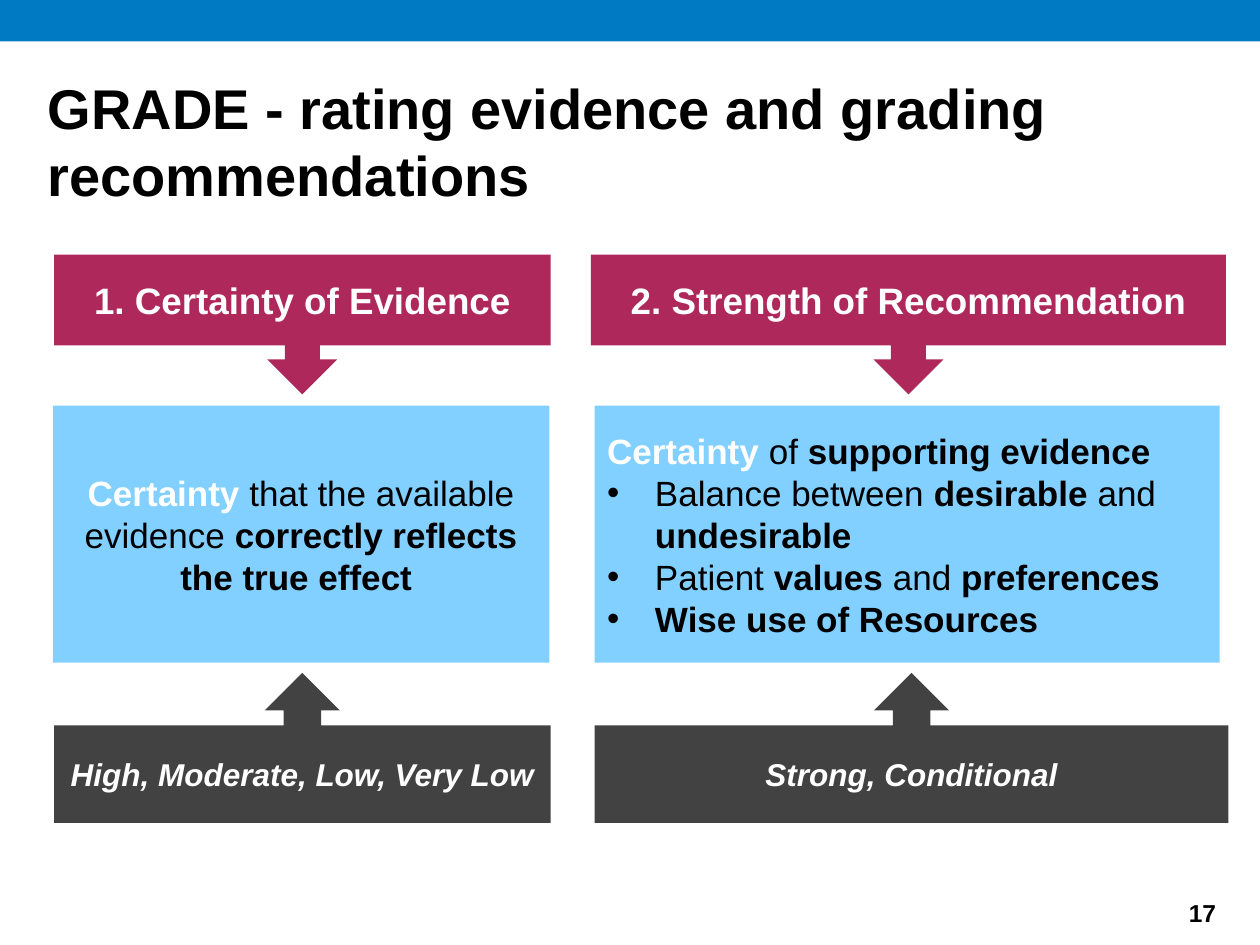
from dataclasses import dataclass, field

import lxml.etree
import pptx
import pptx.dml.color
import pptx.enum.shapes
import pptx.enum.text
import pptx.oxml.ns
import pptx.util

SHAPE = pptx.enum.shapes.MSO_SHAPE
ALIGN = pptx.enum.text.PP_ALIGN
WIDTH, HEIGHT = pptx.util.Inches(10), pptx.util.Inches(7.5)
COLUMNS, ROWS = 100, 75
BLUE, CRIMSON, SKY, BLACK, WHITE = "007BC3", "AE285B", "81D0FF", "000000", "FFFFFF"


@dataclass
class Area:
    """A place on the slide, in grid columns and rows."""
    column: float
    row: float
    columns: float
    rows: float

    def lengths(self) -> tuple[int, int, int, int]:
        across, down = WIDTH / COLUMNS, HEIGHT / ROWS
        return (round(self.column * across), round(self.row * down),
                round(self.columns * across), round(self.rows * down))


@dataclass
class Run:
    text: str
    bold: bool = False
    color: str = BLACK
    italic: bool = False


@dataclass
class Line:
    runs: list[Run]
    bullet: bool = False


@dataclass
class Block:
    area: Area
    fill: str
    lines: list[Line] = field(default_factory=list)
    size: float = 20
    align: ALIGN = ALIGN.CENTER
    kind: SHAPE = SHAPE.RECTANGLE
    opacity: int = 100


def rgb(color: str) -> pptx.dml.color.RGBColor:
    return pptx.dml.color.RGBColor.from_string(color)


def add_bullet(para) -> None:
    properties = para._p.get_or_add_pPr()
    indent = pptx.util.Inches(0.38)
    properties.set("marL", str(indent))
    properties.set("indent", str(-indent))
    for tag, name, value in (("a:buFont", "typeface", "Arial"), ("a:buChar", "char", "•")):
        mark = lxml.etree.SubElement(properties, pptx.oxml.ns.qn(tag))
        mark.set(name, value)


def write(box, lines: list[Line], size: float, align: ALIGN) -> None:
    frame = box.text_frame
    frame.word_wrap = True
    frame.vertical_anchor = pptx.enum.text.MSO_ANCHOR.MIDDLE
    for index, line in enumerate(lines):
        para = frame.add_paragraph() if index else frame.paragraphs[0]
        para.alignment = align
        if line.bullet:
            add_bullet(para)
        for run in line.runs:
            span = para.add_run()
            span.text = run.text
            span.font.name = "Arial"
            span.font.size = pptx.util.Pt(size)
            span.font.bold = run.bold
            span.font.italic = run.italic
            span.font.color.rgb = rgb(run.color)


def draw_block(page, block: Block) -> None:
    shape = page.shapes.add_shape(block.kind, *block.area.lengths())
    shape.shadow.inherit = False
    shape.fill.solid()
    shape.fill.fore_color.rgb = rgb(block.fill)
    shape.line.fill.background()
    if block.opacity < 100:
        color = shape._element.spPr.find(".//" + pptx.oxml.ns.qn("a:srgbClr"))
        alpha = lxml.etree.SubElement(color, pptx.oxml.ns.qn("a:alpha"))
        alpha.set("val", str(block.opacity * 1000))
    write(shape, block.lines, block.size, block.align)


def draw_text(page, area: Area, text: str, size: float, align: ALIGN) -> None:
    box = page.shapes.add_textbox(*area.lengths())
    write(box, [Line([Run(text, bold=True)])], size, align)


def heading(column: float, columns: float, text: str) -> Block:
    return Block(Area(column, 20.2, columns, 11.1), CRIMSON,
                 [Line([Run(text, True, WHITE)])], size=21,
                 kind=SHAPE.DOWN_ARROW_CALLOUT)


def explanation(column: float, columns: float, lines: list[Line], align: ALIGN) -> Block:
    return Block(Area(column, 32.2, columns, 20.4), SKY, lines, align=align)


def levels(column: float, columns: float, text: str) -> Block:
    return Block(Area(column, 53.4, columns, 11.9), BLACK,
                 [Line([Run(text, True, WHITE, italic=True)])], size=18,
                 kind=SHAPE.UP_ARROW_CALLOUT, opacity=74)


CERTAINTY = [
    Line([Run("Certainty", True, WHITE), Run(" that the available evidence "),
          Run("correctly reflects the true effect ", True)]),
]
STRENGTH = [
    Line([Run("Certainty ", True, WHITE), Run("of "), Run("supporting evidence", True)]),
    Line([Run("Balance between "), Run("desirable ", True), Run("and "),
          Run("undesirable ", True)], bullet=True),
    Line([Run("Patient"), Run(" values ", True), Run("and "),
          Run("preferences", True)], bullet=True),
    Line([Run("Wise use of Resources", True)], bullet=True),
]
BLOCKS = [
    Block(Area(0, 0, COLUMNS, 3.3), BLUE),
    heading(4.3, 39.4, "1. Certainty of Evidence"),
    heading(46.9, 50.4, "2. Strength of Recommendation"),
    explanation(4.2, 39.4, CERTAINTY, ALIGN.CENTER),
    explanation(47.2, 49.6, STRENGTH, ALIGN.LEFT),
    levels(4.3, 39.4, "High, Moderate, Low, Very Low"),
    levels(47.2, 50.3, "Strong, Conditional"),
]


def main() -> None:
    deck = pptx.Presentation()
    deck.slide_width, deck.slide_height = WIDTH, HEIGHT
    page = deck.slides.add_slide(deck.slide_layouts[6])
    for block in BLOCKS:
        draw_block(page, block)
    draw_text(page, Area(2.8, 4.5, 96.9, 13.3),
              "GRADE - rating evidence and grading recommendations", 32, ALIGN.LEFT)
    draw_text(page, Area(76.7, 70.8, 20.8, 3.3), "17", 14, ALIGN.RIGHT)
    deck.save("out.pptx")


if __name__ == "__main__":
    main()
